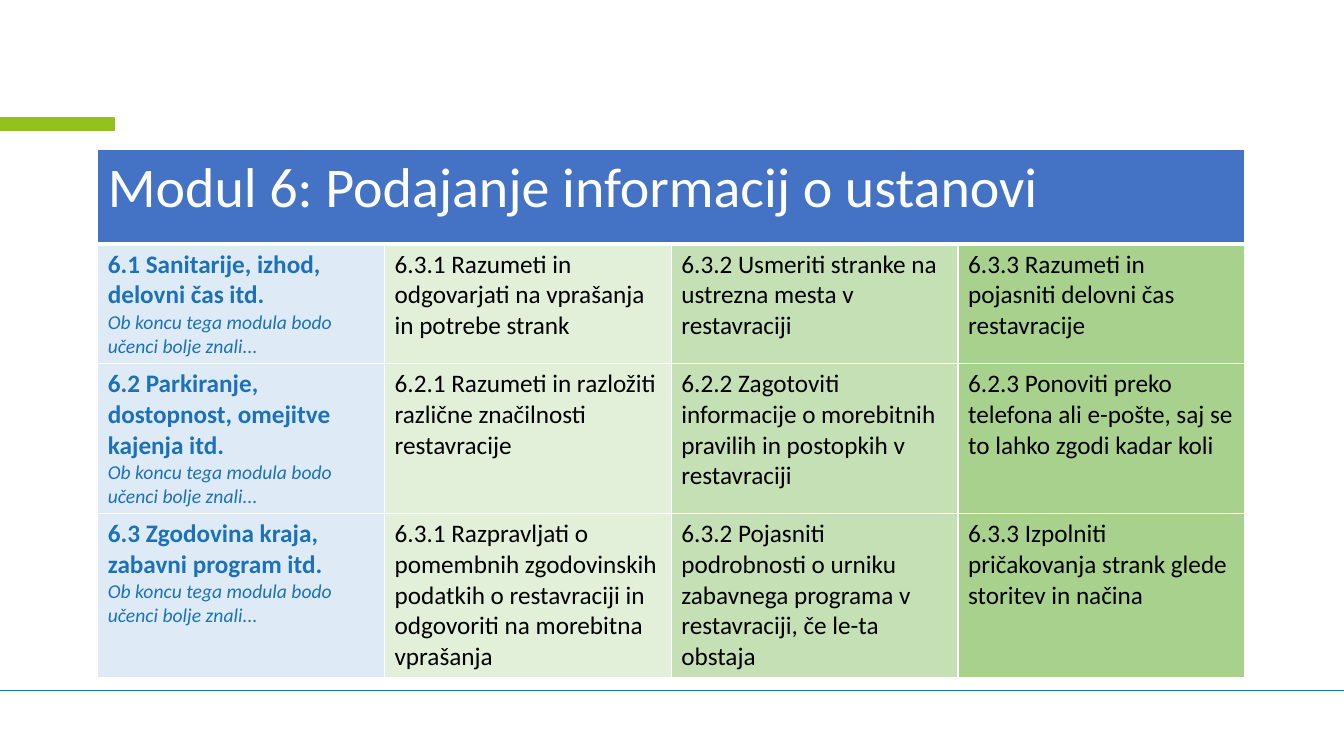
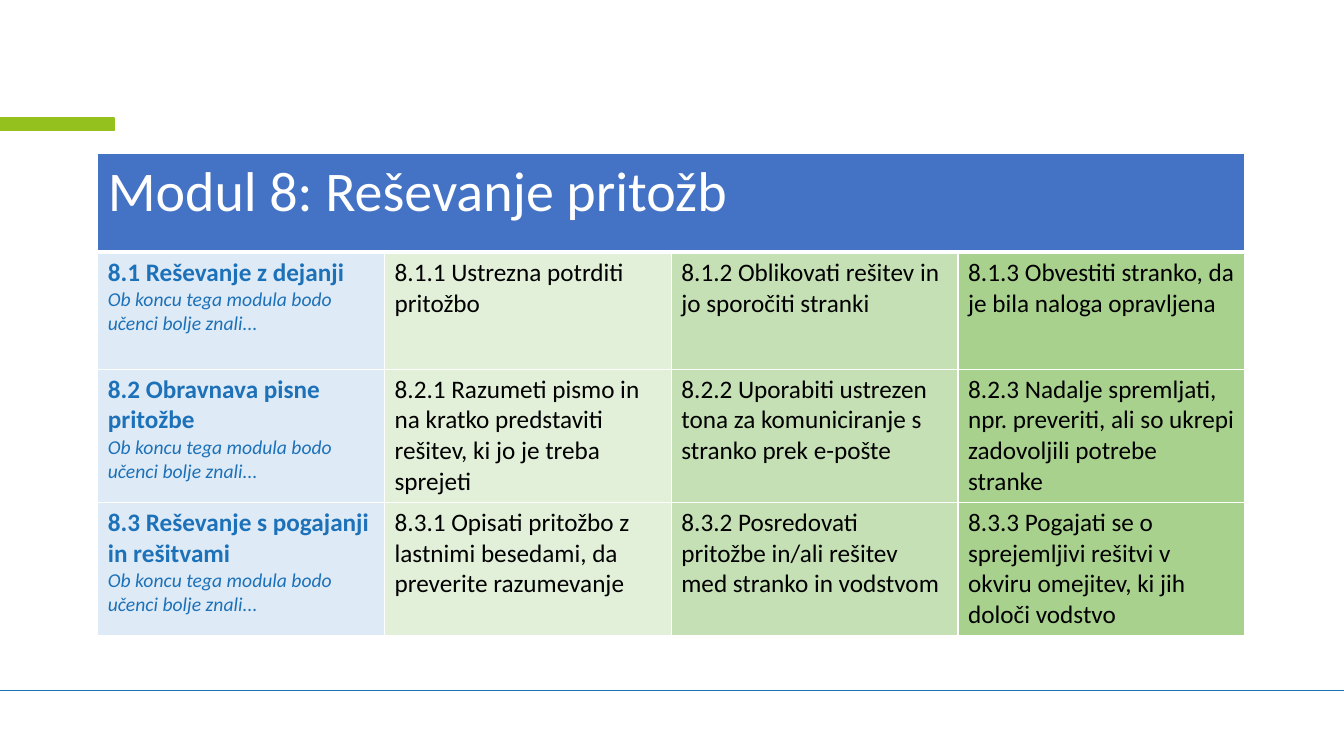
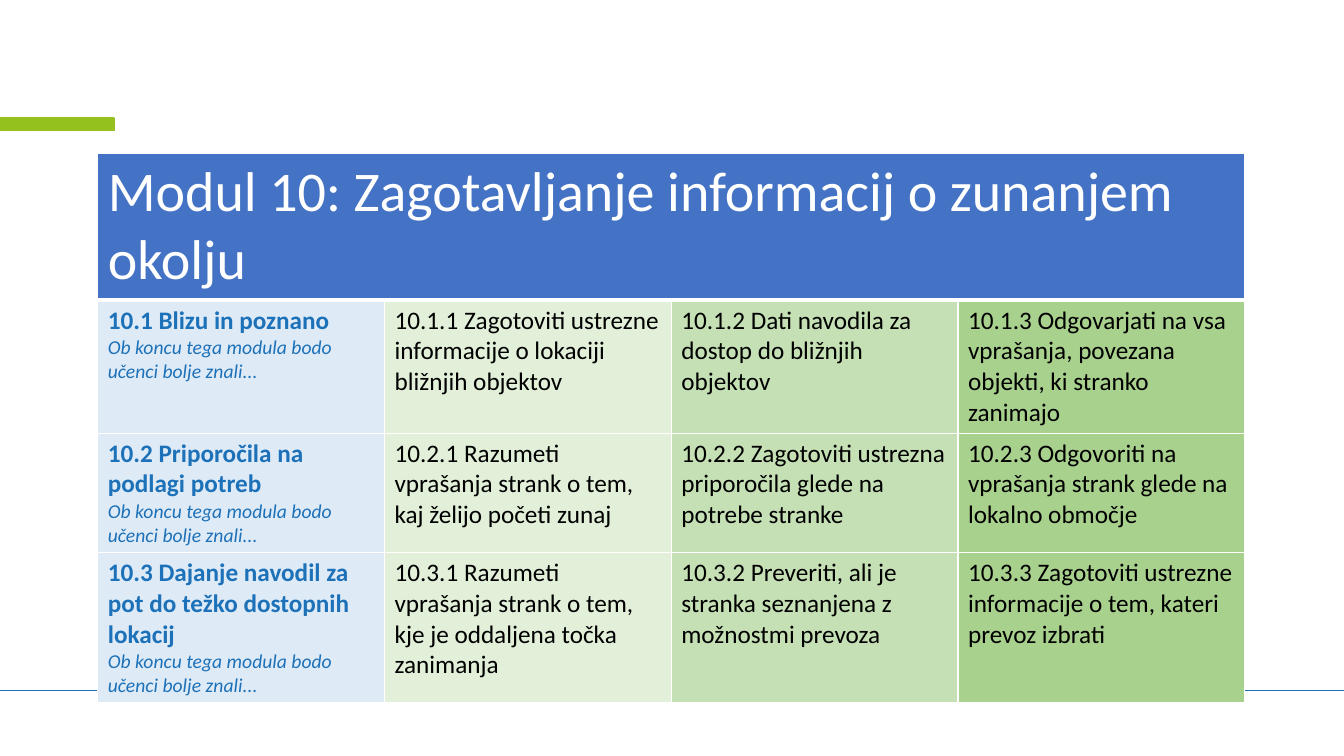
from lxml import etree
from pptx import Presentation
from pptx.dml.color import RGBColor
from pptx.enum.shapes import MSO_CONNECTOR, MSO_SHAPE
from pptx.oxml.ns import qn
from pptx.util import Pt

STRAIGHT = MSO_CONNECTOR.STRAIGHT
RECTANGLE = MSO_SHAPE.RECTANGLE

FONT = "Calibri"
COLORS = {
    "blue": "1D71B8",
    "lime": "95C11F",
    "header": "4472C4",
    "white": "FFFFFF",
    "black": "000000",
    "topic": "DEEBF7",
}
LEVEL_FILLS = ["E2F0D9", "C5E0B4", "A9D18E"]

SLIDE_WIDTH, SLIDE_HEIGHT = 960, 540
TABLE_LEFT = 69.85
COLUMN_WIDTH = 204.85
COLUMN_COUNT = 1 + len(LEVEL_FILLS)
ROW_HEIGHT = 83.5
OUTCOME_LEAD = "Ob koncu tega modula bodo učenci bolje znali..."

MODULES = [
    {
        "title": "Modul 6: Podajanje informacij o ustanovi",
        "top": 106.7,
        "header_height": 67.7,
        "topics": [
            ("6.1 Sanitarije, izhod, delovni čas itd.",
             "6.3.1 Razumeti in odgovarjati na vprašanja in potrebe strank",
             "6.3.2 Usmeriti stranke na ustrezna mesta v restavraciji",
             "6.3.3 Razumeti in pojasniti delovni čas restavracije"),
            ("6.2 Parkiranje, dostopnost, omejitve kajenja itd.",
             "6.2.1 Razumeti in razložiti različne značilnosti restavracije",
             "6.2.2 Zagotoviti informacije o morebitnih pravilih in postopkih v restavraciji",
             "6.2.3 Ponoviti preko telefona ali e-pošte, saj se to lahko zgodi kadar koli"),
            ("6.3 Zgodovina kraja, zabavni program itd.",
             "6.3.1 Razpravljati o pomembnih zgodovinskih podatkih o restavraciji "
             "in odgovoriti na morebitna vprašanja",
             "6.3.2 Pojasniti podrobnosti o urniku zabavnega programa v restavraciji, "
             "če le-ta obstaja",
             "6.3.3 Izpolniti pričakovanja strank glede storitev in načina"),
        ],
    },
    {
        "title": "Modul 8: Reševanje pritožb",
        "top": 109.6,
        "header_height": 70.6,
        "topics": [
            ("8.1 Reševanje z dejanji",
             "8.1.1 Ustrezna potrditi pritožbo",
             "8.1.2 Oblikovati rešitev in jo sporočiti stranki",
             "8.1.3 Obvestiti stranko, da je bila naloga opravljena"),
            ("8.2 Obravnava pisne pritožbe",
             "8.2.1 Razumeti pismo in na kratko predstaviti rešitev, ki jo je treba sprejeti",
             "8.2.2 Uporabiti ustrezen tona za komuniciranje s stranko prek e-pošte",
             "8.2.3 Nadalje spremljati, npr. preveriti, ali so ukrepi zadovoljili "
             "potrebe stranke"),
            ("8.3 Reševanje s pogajanji in rešitvami",
             "8.3.1 Opisati pritožbo z lastnimi besedami, da preverite razumevanje",
             "8.3.2 Posredovati pritožbe in/ali rešitev med stranko in vodstvom",
             "8.3.3 Pogajati se o sprejemljivi rešitvi v okviru omejitev, "
             "ki jih določi vodstvo"),
        ],
    },
    {
        "title": "Modul 10: Zagotavljanje informacij o zunanjem okolju",
        "top": 109.6,
        "header_height": ROW_HEIGHT,
        "topics": [
            ("10.1 Blizu in poznano",
             "10.1.1 Zagotoviti ustrezne informacije o lokaciji bližnjih objektov",
             "10.1.2 Dati navodila za dostop do bližnjih objektov",
             "10.1.3 Odgovarjati na vsa vprašanja, povezana objekti, ki stranko zanimajo"),
            ("10.2 Priporočila na podlagi potreb",
             "10.2.1 Razumeti vprašanja strank o tem, kaj želijo početi zunaj",
             "10.2.2 Zagotoviti ustrezna priporočila glede na potrebe stranke",
             "10.2.3 Odgovoriti na vprašanja strank glede na lokalno območje"),
            ("10.3 Dajanje navodil za pot do težko dostopnih lokacij",
             "10.3.1 Razumeti vprašanja strank o tem, kje je oddaljena točka zanimanja",
             "10.3.2 Preveriti, ali je stranka seznanjena z možnostmi prevoza",
             "10.3.3 Zagotoviti ustrezne informacije o tem, kateri prevoz izbrati"),
        ],
    },
]


def rgb(name):
    return RGBColor.from_string(COLORS[name])


def add_frame(slide):
    """Draw the footer rule and the accent bar that every slide has."""
    rule = slide.shapes.add_connector(
        STRAIGHT, Pt(0), Pt(493.2), Pt(SLIDE_WIDTH), Pt(493.2))
    rule.line.color.rgb = rgb("blue")
    rule.line.width = Pt(1)
    etree.SubElement(rule._element.spPr, qn("a:effectLst"))

    accent = slide.shapes.add_shape(RECTANGLE, Pt(0), Pt(84.3), Pt(81.4), Pt(8.8))
    accent.shadow.inherit = False
    accent.fill.solid()
    accent.fill.fore_color.rgb = rgb("lime")
    accent.line.color.rgb = rgb("lime")
    accent.line.width = Pt(1)


def add_run(paragraph, text, size, color, bold=False, italic=False):
    run = paragraph.add_run()
    run.text = text
    run.font.name = FONT
    run.font.size = Pt(size)
    run.font.bold = bold
    run.font.italic = italic
    run.font.color.rgb = rgb(color)


def style_cell(cell, fill, bottom_width=1):
    """Fill the cell and give it white borders."""
    cell.fill.solid()
    cell.fill.fore_color.rgb = RGBColor.from_string(fill)
    properties = cell._tc.get_or_add_tcPr()
    widths = {"lnL": 1, "lnR": 1, "lnT": 1, "lnB": bottom_width}
    for position, (side, width) in enumerate(widths.items()):
        border = etree.Element(qn(f"a:{side}"), w=str(Pt(width)))
        solid = etree.SubElement(border, qn("a:solidFill"))
        etree.SubElement(solid, qn("a:srgbClr"), val=COLORS["white"])
        properties.insert(position, border)


def fill_header(table, title):
    for column in range(COLUMN_COUNT):
        style_cell(table.cell(0, column), COLORS["header"], bottom_width=3)
    header = table.cell(0, 0)
    header.merge(table.cell(0, COLUMN_COUNT - 1))
    add_run(header.text_frame.paragraphs[0], title, 40, "white")


def fill_topic(table, row, topic, outcomes):
    topic_cell = table.cell(row, 0)
    style_cell(topic_cell, COLORS["topic"])
    add_run(topic_cell.text_frame.paragraphs[0], topic, 18, "blue", bold=True)
    add_run(topic_cell.text_frame.add_paragraph(), OUTCOME_LEAD, 14, "blue", italic=True)
    for column, (outcome, fill) in enumerate(zip(outcomes, LEVEL_FILLS), start=1):
        outcome_cell = table.cell(row, column)
        style_cell(outcome_cell, fill)
        add_run(outcome_cell.text_frame.paragraphs[0], outcome, 18, "black")


def add_module_table(slide, module):
    topics = module["topics"]
    heights = [module["header_height"]] + [ROW_HEIGHT] * len(topics)
    table = slide.shapes.add_table(
        len(heights), COLUMN_COUNT, Pt(TABLE_LEFT), Pt(module["top"]),
        Pt(COLUMN_WIDTH * COLUMN_COUNT), Pt(sum(heights))).table
    table.first_row = False
    table.horz_banding = False
    for column in table.columns:
        column.width = Pt(COLUMN_WIDTH)
    for row, height in zip(table.rows, heights):
        row.height = Pt(height)
    fill_header(table, module["title"])
    for row, (topic, *outcomes) in enumerate(topics, start=1):
        fill_topic(table, row, topic, outcomes)


def main():
    presentation = Presentation()
    presentation.slide_width = Pt(SLIDE_WIDTH)
    presentation.slide_height = Pt(SLIDE_HEIGHT)
    blank = presentation.slide_layouts[6]
    for module in MODULES:
        slide = presentation.slides.add_slide(blank)
        add_frame(slide)
        add_module_table(slide, module)
    presentation.save("out.pptx")


if __name__ == "__main__":
    main()
